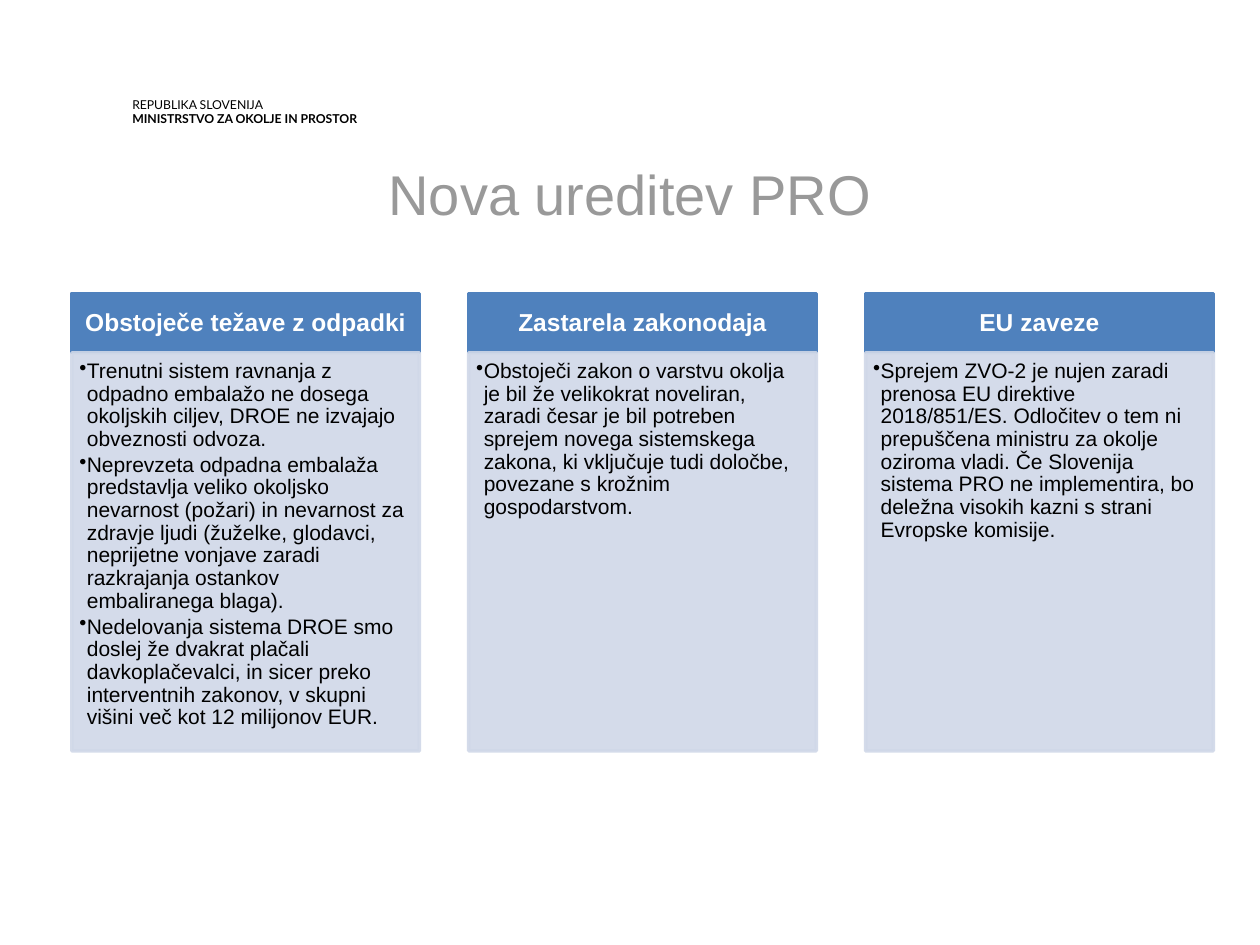
from dataclasses import dataclass

from lxml.etree import SubElement
from pptx import Presentation
from pptx.dml.color import RGBColor as Color
from pptx.enum.shapes import MSO_SHAPE as Shape
from pptx.enum.text import MSO_ANCHOR as Anchor, PP_ALIGN as Align
from pptx.oxml.ns import qn
from pptx.util import Inches, Pt


@dataclass(frozen=True)
class Theme:
    font: str = "Arial"
    letterhead_font: str = "Lato"
    black: Color = Color(0x00, 0x00, 0x00)
    white: Color = Color(0xFF, 0xFF, 0xFF)
    grey: Color = Color(0x99, 0x99, 0x99)
    blue: Color = Color(0x4F, 0x81, 0xBD)
    pale: Color = Color(0xD0, 0xD8, 0xE8)
    letterhead_size: int = 7
    title_size: int = 32
    heading_size: int = 14
    body_size: int = 12


THEME = Theme()

COLUMNS = [
    ("Obstoječe težave z odpadki", [
        "Trenutni sistem ravnanja z odpadno embalažo ne dosega okoljskih ciljev, "
        "DROE ne izvajajo obveznosti odvoza.",
        "Neprevzeta odpadna embalaža predstavlja veliko okoljsko nevarnost (požari) "
        "in nevarnost za zdravje ljudi (žuželke, glodavci, neprijetne vonjave zaradi "
        "razkrajanja ostankov embaliranega blaga).",
        "Nedelovanja sistema DROE smo doslej že dvakrat plačali davkoplačevalci, "
        "in sicer preko interventnih zakonov, v skupni višini več kot 12 milijonov EUR.",
    ]),
    ("Zastarela zakonodaja", [
        "Obstoječi zakon o varstvu okolja je bil že velikokrat noveliran, zaradi česar "
        "je bil potreben sprejem novega sistemskega zakona, ki vključuje tudi določbe, "
        "povezane s krožnim gospodarstvom.",
    ]),
    ("EU zaveze", [
        "Sprejem ZVO-2 je nujen zaradi prenosa EU direktive 2018/851/ES. Odločitev o tem "
        "ni prepuščena ministru za okolje oziroma vladi. Če Slovenija sistema PRO ne "
        "implementira, bo deležna visokih kazni s strani Evropske komisije.",
    ]),
]


def set_insets(frame, left=0, top=0, right=0, bottom=0):
    frame.margin_left, frame.margin_top = Inches(left), Inches(top)
    frame.margin_right, frame.margin_bottom = Inches(right), Inches(bottom)


def add_span(para, text, size, color, bold=False, font=THEME.font):
    span = para.add_run()
    span.text = text
    span.font.name, span.font.size, span.font.bold = font, Pt(size), bold
    span.font.color.rgb = color


def next_para(frame, index):
    return frame.add_paragraph() if index else frame.paragraphs[0]


def add_text_box(page, left, top, width, height, wrap=True):
    box = page.shapes.add_textbox(Inches(left), Inches(top), Inches(width), Inches(height))
    set_insets(box.text_frame)
    box.text_frame.word_wrap = wrap
    return box.text_frame


def add_panel(page, left, top, width, height, color, opacity=100):
    panel = page.shapes.add_shape(
        Shape.RECTANGLE, Inches(left), Inches(top), Inches(width), Inches(height))
    panel.shadow.inherit = False
    panel.line.width = Pt(2)
    for fill in (panel.fill, panel.line.fill):
        fill.solid()
        fill.fore_color.rgb = color
    if opacity < 100:
        for tone in panel.element.spPr.iter(qn("a:srgbClr")):
            SubElement(tone, qn("a:alpha"), val=str(opacity * 1000))
    panel.text_frame.word_wrap = True
    return panel.text_frame


def add_bullet(para, indent):
    props = para._p.get_or_add_pPr()
    props.set("marL", str(indent))
    props.set("indent", str(-indent))
    SubElement(props, qn("a:buChar"), char="•")


def add_letterhead(page, left, top, width, height):
    frame = add_text_box(page, left, top, width, height)
    lines = [("REPUBLIKA SLOVENIJA", False), ("MINISTRSTVO ZA OKOLJE IN PROSTOR", True)]
    for index, (text, bold) in enumerate(lines):
        para = next_para(frame, index)
        para.line_spacing = Pt(8.4)
        add_span(para, text, THEME.letterhead_size, THEME.black, bold, THEME.letterhead_font)


def add_title(page, left, top, width, height):
    frame = add_text_box(page, left, top, width, height, wrap=False)
    para = frame.paragraphs[0]
    para.alignment = Align.CENTER
    add_span(para, "Nova ureditev PRO", THEME.title_size, THEME.grey)


def add_column(page, left, top, width, height, heading, points):
    heading_height = 0.47

    # Heading bar
    frame = add_panel(page, left, top, width, heading_height, THEME.blue)
    set_insets(frame, 0.09, 0.05, 0.09, 0.05)
    frame.vertical_anchor = Anchor.MIDDLE
    para = frame.paragraphs[0]
    para.alignment, para.line_spacing = Align.CENTER, 0.9
    add_span(para, heading, THEME.heading_size, THEME.white, bold=True)

    # Bulleted body
    frame = add_panel(page, left, top + heading_height, width, height - heading_height,
                      THEME.pale, opacity=90)
    set_insets(frame, 0.06, 0.06, 0.09, 0.1)
    frame.vertical_anchor = Anchor.TOP
    for index, point in enumerate(points):
        para = next_para(frame, index)
        para.level, para.alignment = 1, Align.LEFT
        para.line_spacing, para.space_after = 0.9, Pt(0.15 * THEME.body_size)
        add_bullet(para, Inches(0.06))
        add_span(para, point, THEME.body_size, THEME.black)


def add_columns(page, left, top, width, height):
    column_width = 2.76
    step = (width - column_width) / (len(COLUMNS) - 1)
    for index, (heading, points) in enumerate(COLUMNS):
        add_column(page, left + index * step, top, column_width, height, heading, points)


def main():
    deck = Presentation()
    deck.slide_width, deck.slide_height = Inches(10), Inches(7.5)
    page = deck.slides.add_slide(deck.slide_layouts[6])
    add_letterhead(page, 1.05, 0.77, 2.36, 0.23)
    add_title(page, 3.07, 1.27, 3.86, 0.54)
    add_columns(page, 0.57, 2.33, 9.06, 3.63)
    deck.save("out.pptx")


if __name__ == "__main__":
    main()
